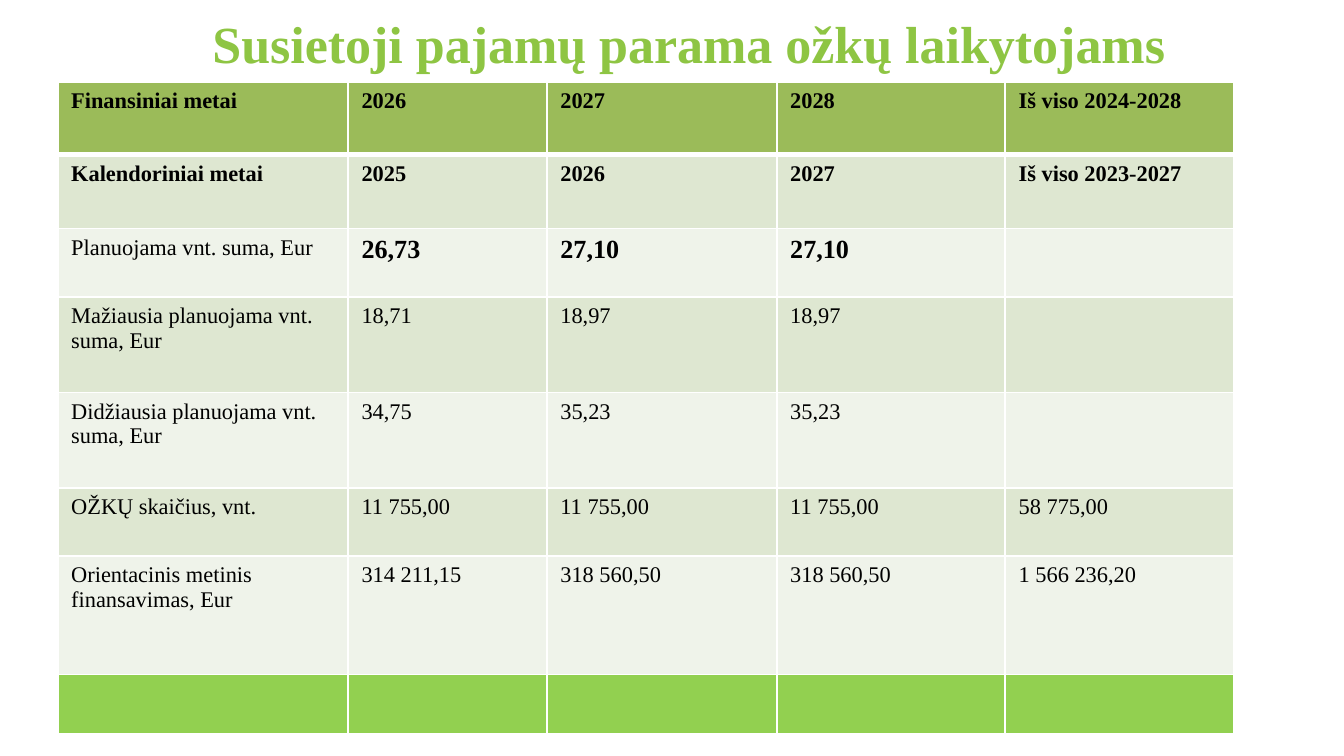
from pptx import Presentation
from pptx.dml.color import RGBColor
from pptx.enum.text import MSO_ANCHOR, PP_ALIGN
from pptx.oxml import parse_xml
from pptx.oxml.ns import nsdecls
from pptx.util import Inches, Pt

FONT = "Times New Roman"
TITLE = "Susietoji pajamų parama ožkų laikytojams"
ROWS = [
    ["Finansiniai metai", "2026", "2027", "2028", "Iš viso 2024-2028"],
    ["Kalendoriniai metai", "2025", "2026", "2027", "Iš viso 2023-2027"],
    ["Planuojama vnt. suma, Eur", "26,73", "27,10", "27,10", ""],
    ["Mažiausia planuojama vnt. suma, Eur", "18,71", "18,97", "18,97", ""],
    ["Didžiausia planuojama vnt. suma, Eur", "34,75", "35,23", "35,23", ""],
    ["OŽKŲ skaičius, vnt.", "11 755,00", "11 755,00", "11 755,00", "58 775,00"],
    ["Orientacinis metinis finansavimas, Eur", "314 211,15", "318 560,50",
     "318 560,50", "1 566 236,20"],
    [""] * 5,
]
COL_WIDTHS = [2.16, 1.48, 1.71, 1.7, 1.7]
ROW_HEIGHTS = [0.54, 0.55, 0.51, 0.71, 0.71, 0.51, 0.88, 0.44]
HEADER_FILL, FOOTER_FILL = "9BBB59", "92D050"
BAND_FILLS = ["EFF3EA", "DEE7D1"]
UNIT_SUM_ROW = 2


def color(value):
    return RGBColor.from_string(value)


def write(tf, text, fmt, fill):
    r = tf.paragraphs[0].add_run()
    r.text = text
    for name, value in fmt.items():
        setattr(r.font, name, value)
    r.font.color.rgb = color(fill)


def set_borders(cell, widths):
    """Draw white cell borders; widths maps L, R, T, B to points."""
    tcPr = cell._tc.get_or_add_tcPr()
    for i, (side, width) in enumerate(widths.items()):
        tcPr.insert(i, parse_xml(
            f'<a:ln{side} {nsdecls("a")} w="{Pt(width)}"><a:solidFill>'
            f'<a:srgbClr val="FFFFFF"/></a:solidFill></a:ln{side}>'))


def row_fill(row):
    if row == 0:
        return HEADER_FILL
    return FOOTER_FILL if row == len(ROWS) - 1 else BAND_FILLS[row % 2]


def text_format(row, col):
    big = row == UNIT_SUM_ROW and col > 0
    return {"name": FONT, "size": Pt(14 if big else 12), "bold": row < 2 or big}


prs = Presentation()
prs.slide_width = Inches(10)
prs.slide_height = prs.slide_width * 9 // 16
s = prs.slides.add_slide(prs.slide_layouts[6])

title = s.shapes.add_textbox(Inches(0.75), Inches(0.1), Inches(8.75), Inches(0.43))
tf = title.text_frame
tf.word_wrap = True
tf.vertical_anchor = MSO_ANCHOR.MIDDLE
tf.margin_top = tf.margin_bottom = 0
tf.paragraphs[0].alignment = PP_ALIGN.CENTER
write(tf, TITLE, {"name": FONT, "size": Pt(27.9), "bold": True}, "8EC543")

table = s.shapes.add_table(len(ROWS), len(COL_WIDTHS), Inches(0.43), Inches(0.61),
                           Inches(sum(COL_WIDTHS)), Inches(sum(ROW_HEIGHTS))).table
for column, width in zip(table.columns, COL_WIDTHS):
    column.width = Inches(width)
for row, height in zip(table.rows, ROW_HEIGHTS):
    row.height = Inches(height)
for i, texts in enumerate(ROWS):
    for j, text in enumerate(texts):
        cell = table.cell(i, j)
        cell.fill.solid()
        cell.fill.fore_color.rgb = color(row_fill(i))
        set_borders(cell, {"L": 1, "R": 1, "T": 3 if i == 1 else 1,
                           "B": 3 if i == 0 else 1})
        if text:
            write(cell.text_frame, text, text_format(i, j), "000000")

prs.save("out.pptx")
